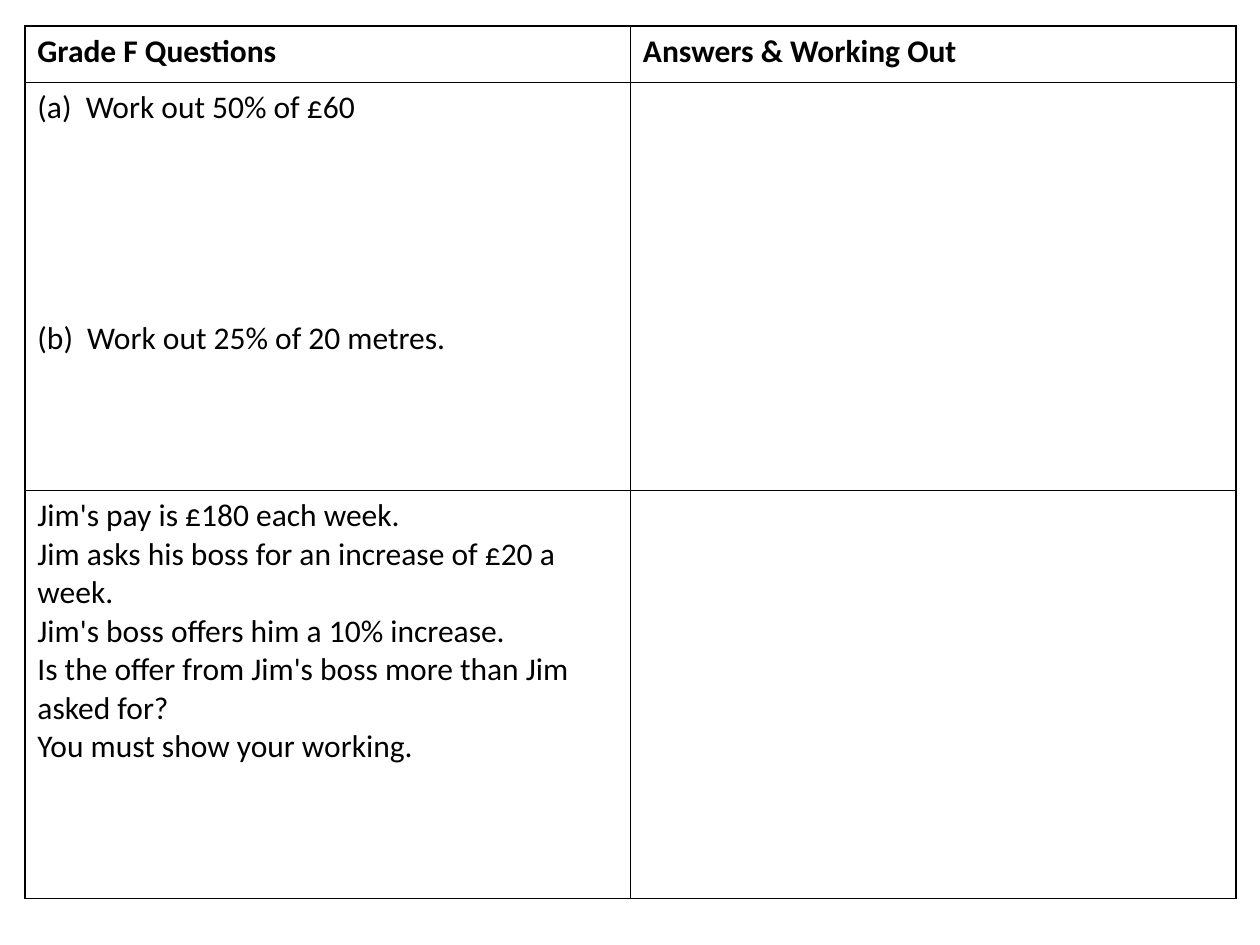
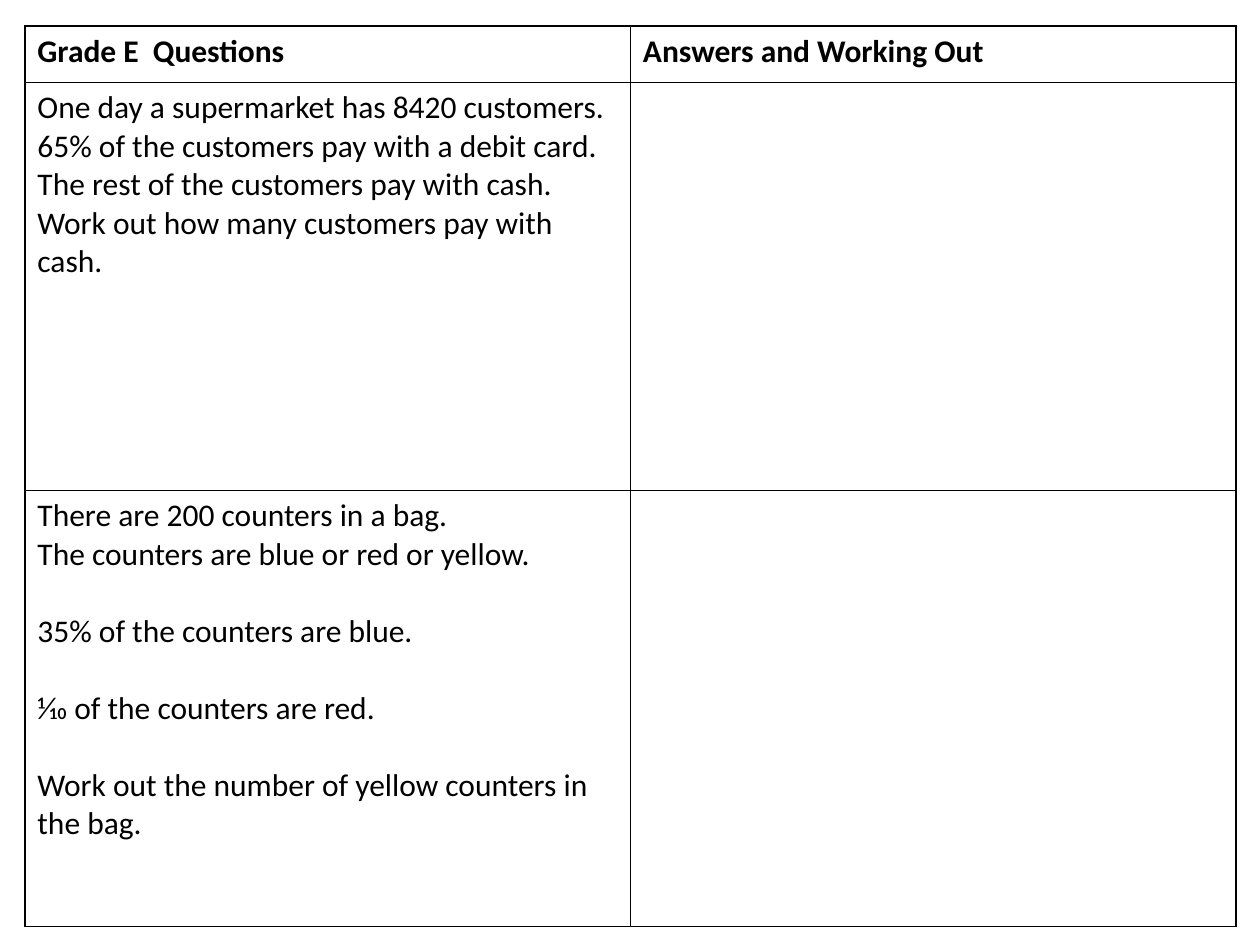
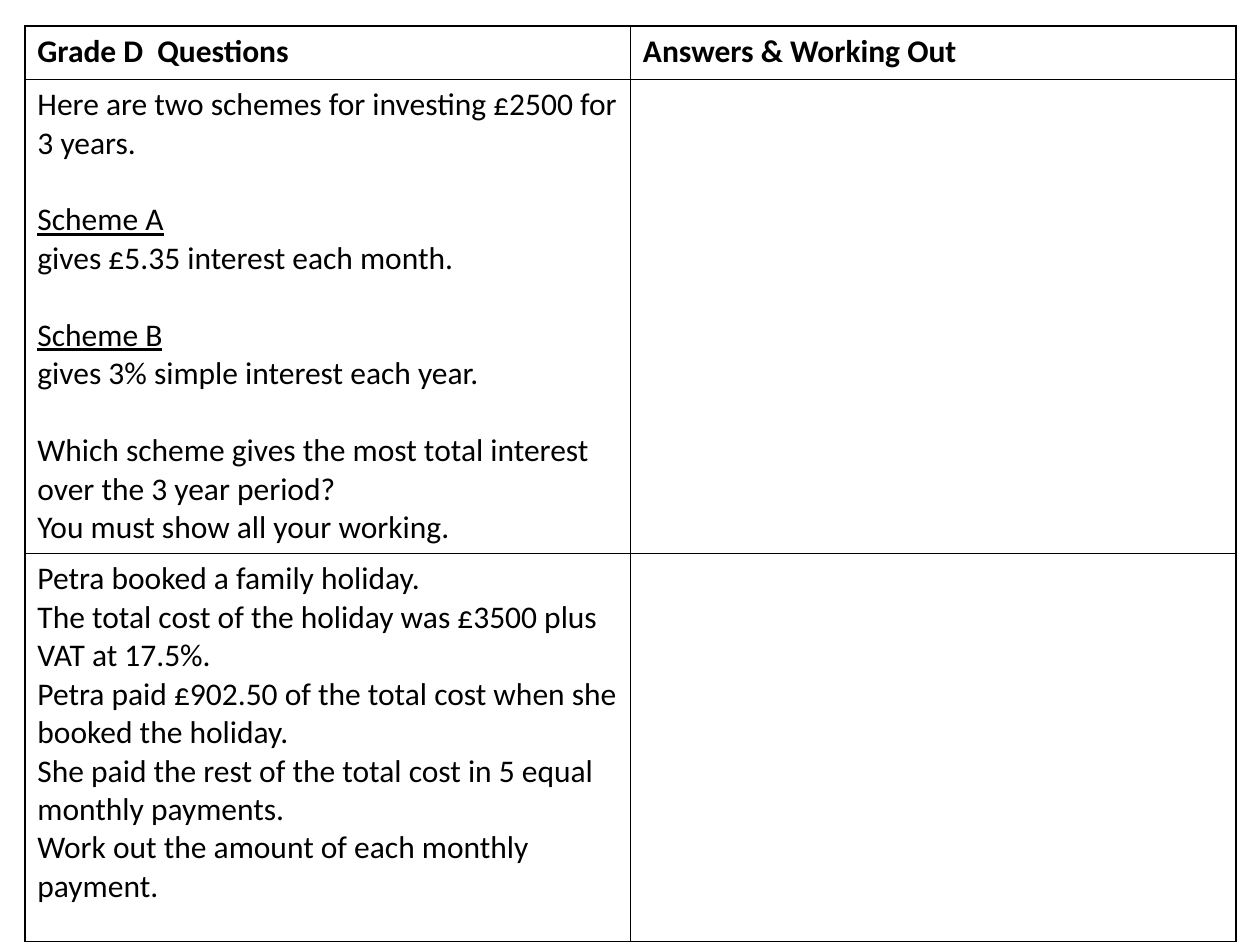
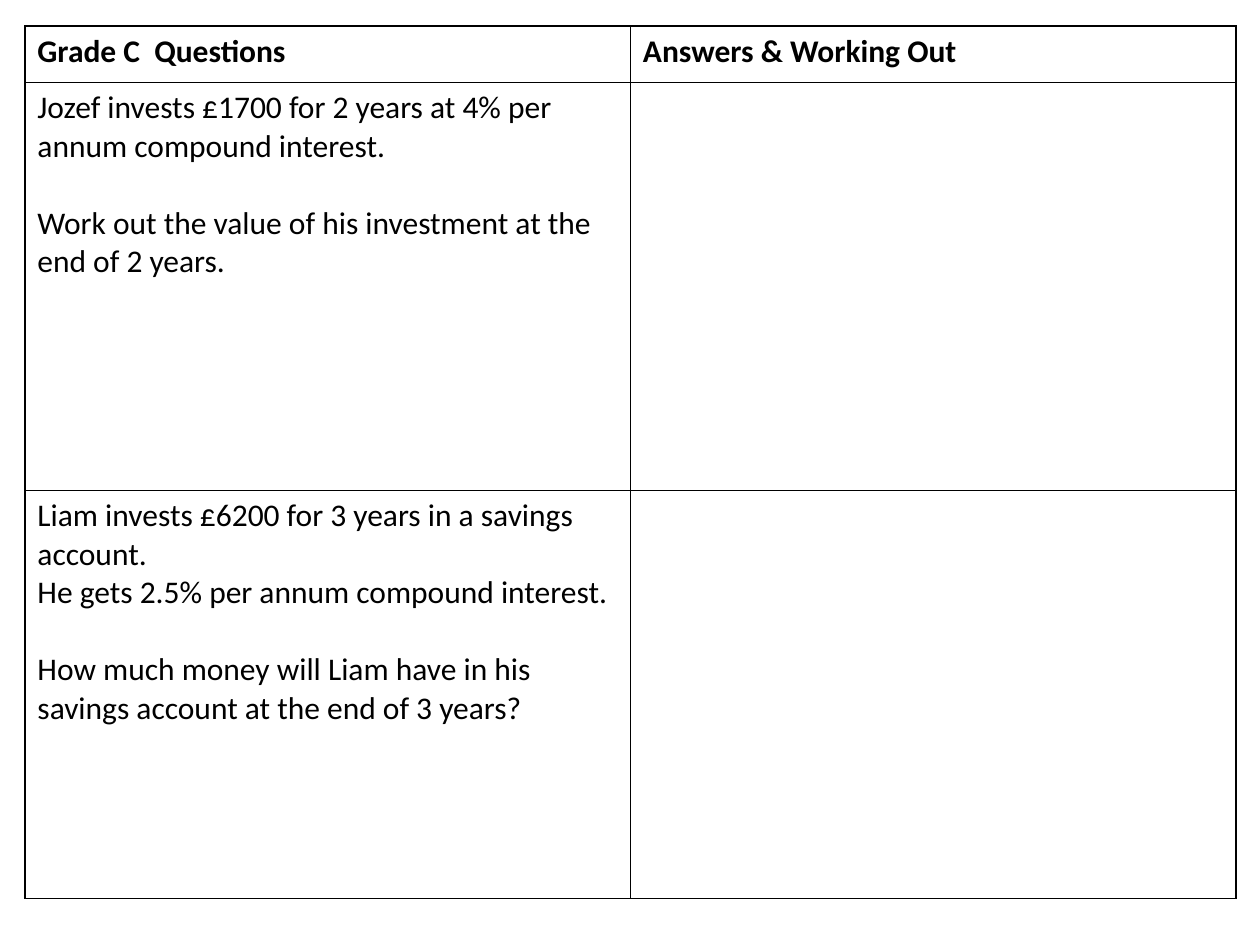
from lxml import etree
from pptx import Presentation
from pptx.dml.color import RGBColor
from pptx.oxml import ns
from pptx.util import Pt

# Shared look
HUES = {"ink": "000000", "rule": "000000"}
FONT = "Calibri"
SIZE = 18
LINE = 22  # height of one text line
LEFT, TOP, WIDE = 14.2, 14.9, 346
ROWS = (32.3, 233.2, 233.2)


def item(words, gap=0, under=False):
    """A line of a question; gap counts the free lines above it."""
    return words, gap, under


# Worksheets: heads, row heights and the two questions
SHEETS = [
    {
        "heads": ("Grade F Questions", "Answers & Working Out"),
        "rows": ROWS,
        "tasks": [
            [
                item("(a)  Work out 50% of £60"),
                item("(b)  Work out 25% of 20 metres.", gap=5),
            ],
            [
                item("Jim's pay is £180 each week."),
                item("Jim asks his boss for an increase of £20 a week."),
                item("Jim's boss offers him a 10% increase."),
                item("Is the offer from Jim's boss more than Jim asked for?"),
                item("You must show your working."),
            ],
        ],
    },
    {
        "heads": ("Grade E  Questions", "Answers and Working Out"),
        "rows": (*ROWS[:2], 249),
        "tasks": [
            [
                item("One day a supermarket has 8420 customers."),
                item("65% of the customers pay with a debit card."),
                item("The rest of the customers pay with cash."),
                item("Work out how many customers pay with cash."),
            ],
            [
                item("There are 200 counters in a bag."),
                item("The counters are blue or red or yellow."),
                item("35% of the counters are blue.", gap=1),
                item("1⁄10 of the counters are red.", gap=1),
                item("Work out the number of yellow counters in the bag.", gap=1),
            ],
        ],
    },
    {
        "heads": ("Grade D  Questions", "Answers & Working Out"),
        "rows": (30.4, 271, 221.6),
        "tasks": [
            [
                item("Here are two schemes for investing £2500 for 3 years."),
                item("Scheme A", gap=1, under=True),
                item("gives £5.35 interest each month."),
                item("Scheme B", gap=1, under=True),
                item("gives 3% simple interest each year."),
                item("Which scheme gives the most total interest "
                     "over the 3 year period?", gap=1),
                item("You must show all your working."),
            ],
            [
                item("Petra booked a family holiday."),
                item("The total cost of the holiday was £3500 plus VAT at 17.5%."),
                item("Petra paid £902.50 of the total cost when she "
                     "booked the holiday."),
                item("She paid the rest of the total cost in 5 equal "
                     "monthly payments."),
                item("Work out the amount of each monthly payment."),
            ],
        ],
    },
    {
        "heads": ("Grade C  Questions", "Answers & Working Out"),
        "rows": ROWS,
        "tasks": [
            [
                item("Jozef invests £1700 for 2 years at 4% per annum "
                     "compound interest."),
                item("Work out the value of his investment at the "
                     "end of 2 years.", gap=1),
            ],
            [
                item("Liam invests £6200 for 3 years in a savings account."),
                item("He gets 2.5% per annum compound interest."),
                item("How much money will Liam have in his savings account "
                     "at the end of 3 years?", gap=1),
            ],
        ],
    },
]


def frame(cell):
    """Rule all four sides of a cell and clear its fill."""
    props = cell._tc.get_or_add_tcPr()
    for side in ("lnL", "lnR", "lnT", "lnB"):
        edge = etree.SubElement(props, ns.qn("a:" + side), w=str(Pt(1)))
        fill = etree.SubElement(edge, ns.qn("a:solidFill"))
        etree.SubElement(fill, ns.qn("a:srgbClr"), val=HUES["rule"])
    cell.fill.background()


def write(cell, items, bold=False):
    """Fill a cell with one paragraph per item."""
    frm = cell.text_frame
    for num, (words, gap, under) in enumerate(items):
        para = frm.add_paragraph() if num else frm.paragraphs[0]
        para.text = words
        para.space_before = Pt(gap * LINE)
        font = para.font
        font.name, font.size = FONT, Pt(SIZE)
        font.bold, font.underline = bold, under
        font.color.rgb = RGBColor.from_string(HUES["ink"])


def add_sheet(deck, sheet):
    """Add a slide with a question column and a free answer column."""
    slide = deck.slides.add_slide(deck.slide_layouts[6])
    rows = sheet["rows"]
    grid = slide.shapes.add_table(
        len(rows), 2, Pt(LEFT), Pt(TOP), Pt(2 * WIDE), Pt(sum(rows))).table
    grid.first_row = grid.horz_banding = False
    for col in grid.columns:
        col.width = Pt(WIDE)
    for row, high in zip(grid.rows, rows):
        row.height = Pt(high)
    for cell in grid.iter_cells():
        frame(cell)
    for col, head in enumerate(sheet["heads"]):
        write(grid.cell(0, col), [item(head)], bold=True)
    for row, task in enumerate(sheet["tasks"], 1):
        write(grid.cell(row, 0), task)


def main():
    deck = Presentation()
    deck.slide_width, deck.slide_height = Pt(720), Pt(540)
    for sheet in SHEETS:
        add_sheet(deck, sheet)
    deck.save("out.pptx")


if __name__ == "__main__":
    main()
